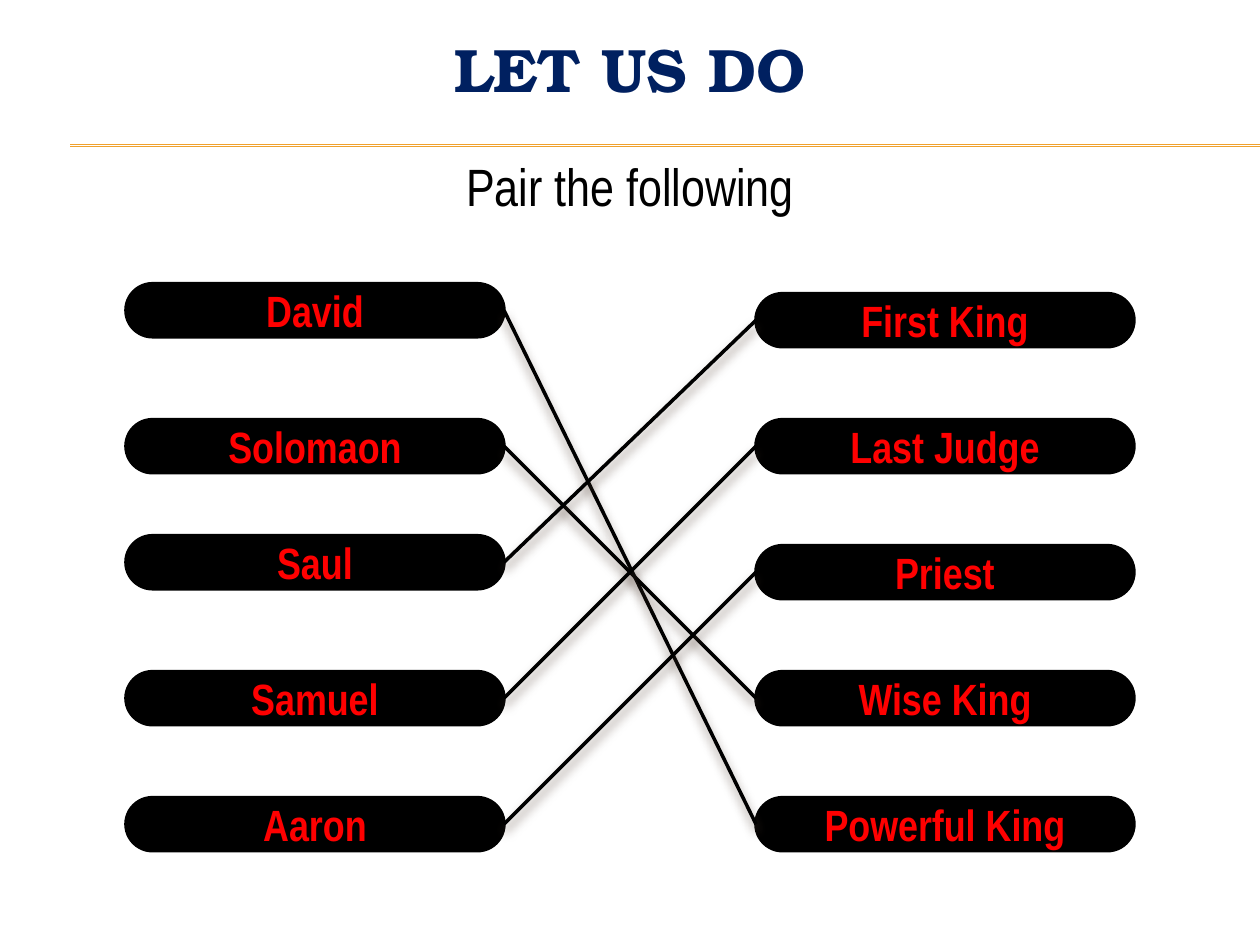
from lxml import etree
from pptx import Presentation
from pptx.dml.color import RGBColor
from pptx.enum.shapes import MSO_CONNECTOR, MSO_SHAPE
from pptx.enum.text import MSO_ANCHOR, MSO_AUTO_SIZE, PP_ALIGN
from pptx.oxml import parse_xml
from pptx.oxml.ns import nsdecls, qn
from pptx.util import Cm, Pt

STRAIGHT = MSO_CONNECTOR.STRAIGHT
PILL = MSO_SHAPE.ROUNDED_RECTANGLE
CENTER = PP_ALIGN.CENTER
MIDDLE, TOP = MSO_ANCHOR.MIDDLE, MSO_ANCHOR.TOP
NO_FIT = MSO_AUTO_SIZE.NONE

COLORS = {"rule": "F0A22E", "title": "002060", "text": "000000",
          "pill": "000000", "label": "FF0000", "shadow": "4E3B30"}
TITLE_FONT, BODY_FONT = "TeX Gyre Bonum", "Arial Narrow"

PILL_W, PILL_H = 7.62, 1.07
NAMES_X, ROLES_X = 2.54, 15.24
NAMES = {"David": 5.72, "Solomaon": 8.46, "Saul": 10.8,
         "Samuel": 13.54, "Aaron": 16.08}
ROLES = {role: 5.92 + 2.54 * i for i, role in enumerate(
    ["First King", "Last Judge", "Priest", "Wise King", "Powerful King"])}
PAIRS = {"David": "Powerful King", "Solomaon": "Wise King",
         "Saul": "First King", "Samuel": "Last Judge", "Aaron": "Priest"}
LEFT_SITE, RIGHT_SITE = 1, 3


def rgb(name):
    return RGBColor.from_string(COLORS[name])


def set_text(shape, text, font, size, color, bold=False, anchor=MIDDLE):
    tf = shape.text_frame
    tf.text = text
    tf.word_wrap = True
    tf.auto_size = NO_FIT
    tf.vertical_anchor = anchor
    p = tf.paragraphs[0]
    p.alignment = CENTER
    f = p.runs[0].font
    f.name, f.size, f.bold = font, Pt(size), bold
    f.color.rgb = rgb(color)
    return p


def place(shape, x, y, w, h):
    shape.left, shape.top, shape.width, shape.height = map(Cm, (x, y, w, h))


def add_line(s, x1, y1, x2, y2, color, width):
    line = s.shapes.add_connector(STRAIGHT, Cm(x1), Cm(y1), Cm(x2), Cm(y2))
    line.line.color.rgb = rgb(color)
    line.line.width = Pt(width)
    effects = etree.SubElement(line._element.spPr, qn("a:effectLst"))
    return line, effects


def add_pill(s, text, x, y):
    sp = s.shapes.add_shape(PILL, Cm(x), Cm(y), Cm(PILL_W), Cm(PILL_H))
    sp.adjustments[0] = 0.5
    sp.shadow.inherit = False
    sp.fill.solid()
    sp.fill.fore_color.rgb = rgb("pill")
    sp.line.color.rgb = rgb("pill")
    sp.line.width = Pt(2)
    set_text(sp, text, BODY_FONT, 25, "label", bold=True)
    return sp


def add_match(s, name, role):
    """Join a name to its role with a softly shadowed line."""
    line, effects = add_line(s, 0, 0, 1, 1, "pill", 2)
    line.begin_connect(name, RIGHT_SITE)
    line.end_connect(role, LEFT_SITE)
    effects.append(parse_xml(
        f'<a:outerShdw {nsdecls("a")} blurRad="{Pt(6)}" dist="{Pt(4)}" '
        f'dir="5400000" rotWithShape="0"><a:srgbClr val="{COLORS["shadow"]}">'
        '<a:alpha val="60000"/></a:srgbClr></a:outerShdw>'))


def add_heading(s):
    title, body = s.shapes.title, s.placeholders[1]
    place(title, 0, 0.2, 25.4, 2.34)
    set_text(title, "LET US DO", TITLE_FONT, 35, "title", bold=True)
    place(body, 0.64, 2.97, 24.13, 1.47)
    p = set_text(body, "Pair the following", BODY_FONT, 30, "text", anchor=TOP)
    p.space_before = Pt(6)
    pPr = p._p.get_or_add_pPr()
    pPr.set("marL", "0")
    pPr.set("indent", "0")
    etree.SubElement(pPr, qn("a:buNone"))


def main():
    prs = Presentation()
    prs.slide_width, prs.slide_height = Cm(25.4), Cm(19.05)
    s = prs.slides.add_slide(prs.slide_layouts[1])
    for y in (2.92, 2.95):
        add_line(s, 1.42, y, 25.4, y, "rule", 0.75)
    add_heading(s)
    names = {t: add_pill(s, t, NAMES_X, y) for t, y in NAMES.items()}
    roles = {t: add_pill(s, t, ROLES_X, y) for t, y in ROLES.items()}
    for name, role in PAIRS.items():
        add_match(s, names[name], roles[role])
    prs.save("out.pptx")


if __name__ == "__main__":
    main()
